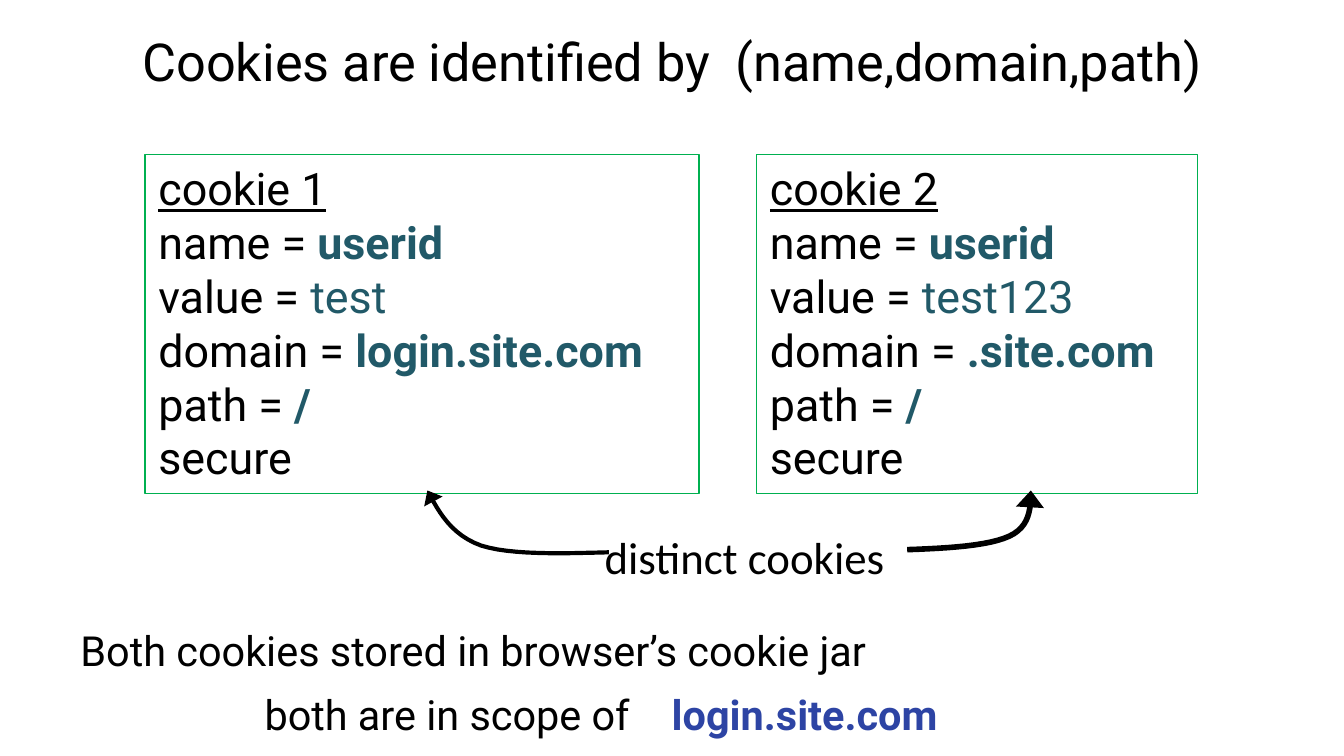
from dataclasses import dataclass

from lxml.etree import SubElement
from pptx import Presentation
from pptx.dml.color import RGBColor
from pptx.enum.shapes import MSO_SHAPE as Preset
from pptx.enum.text import MSO_ANCHOR as Anchor, PP_ALIGN as Align
from pptx.oxml.ns import qn
from pptx.util import Inches, Pt

BLACK = RGBColor(0x00, 0x00, 0x00)
GREEN = RGBColor(0x00, 0xB0, 0x50)
TEAL = RGBColor(0x21, 0x59, 0x68)
BLUE = RGBColor(0x2D, 0x44, 0xA4)
CURVE_STEPS = 12

Point = tuple[float, float]


@dataclass
class Cookie:
    title: str
    value: str
    domain: str
    left: float
    width: float


@dataclass
class Arrow:
    start: Point
    curves: list[tuple[Point, Point, Point]]
    weight: float


COOKIES = [
    Cookie("cookie 1", "test", "login.site.com", 1.08, 4.12),
    Cookie("cookie 2", "test123", ".site.com", 5.63, 3.28),
]
ARROWS = [
    Arrow((4.53, 4.11), [((4.17, 4.12), (3.8, 4.13), (3.58, 4.06)),
                         ((3.36, 3.98), (3.27, 3.82), (3.18, 3.65))], 2.25),
    Arrow((6.75, 4.09), [((7.06, 4.08), (7.36, 4.06), (7.51, 3.99)),
                         ((7.66, 3.92), (7.67, 3.79), (7.67, 3.65))], 3),
]


def add_run(paragraph, text: str, *, size: float, font: str = "Roboto",
            color: RGBColor = BLACK, bold: bool = False,
            underline: bool = False) -> None:
    run = paragraph.add_run()
    run.text = text
    run.font.name = font
    run.font.size = Pt(size)
    run.font.color.rgb = color
    run.font.bold = bold
    run.font.underline = underline


def add_text_box(slide, left: float, top: float, width: float, height: float,
                 anchor: Anchor = Anchor.TOP):
    box = slide.shapes.add_textbox(
        Inches(left), Inches(top), Inches(width), Inches(height))
    frame = box.text_frame
    frame.word_wrap = True
    frame.vertical_anchor = anchor
    return frame


def add_cookie(slide, cookie: Cookie) -> None:
    shape = slide.shapes.add_shape(
        Preset.RECTANGLE, Inches(cookie.left), Inches(1.15),
        Inches(cookie.width), Inches(2.52))
    shape.shadow.inherit = False
    shape.fill.background()
    shape.line.color.rgb = GREEN
    shape.line.width = Pt(0.75)
    frame = shape.text_frame
    frame.word_wrap = True
    frame.vertical_anchor = Anchor.TOP
    heading = frame.paragraphs[0]
    heading.alignment = Align.LEFT
    add_run(heading, cookie.title, size=24, underline=True)
    fields = [
        ("name = ", "userid", True),
        ("value = ", cookie.value, False),
        ("domain = ", cookie.domain, True),
        ("path = ", "/", True),
        ("secure", "", False),
    ]
    for label, value, bold in fields:
        paragraph = frame.add_paragraph()
        paragraph.alignment = Align.LEFT
        add_run(paragraph, label, size=24)
        if value:
            add_run(paragraph, value, size=24, color=TEAL, bold=bold)


def curve_points(arrow: Arrow) -> list[Point]:
    points = []
    start = arrow.start
    for first, second, end in arrow.curves:
        for step in range(1, CURVE_STEPS + 1):
            t = step / CURVE_STEPS
            u = 1 - t
            x, y = (u**3 * a + 3 * u * u * t * b + 3 * u * t * t * c + t**3 * d
                    for a, b, c, d in zip(start, first, second, end))
            points.append((Inches(x), Inches(y)))
        start = end
    return points


def add_arrow(slide, arrow: Arrow) -> None:
    x, y = arrow.start
    builder = slide.shapes.build_freeform(Inches(x), Inches(y))
    builder.add_line_segments(curve_points(arrow), close=False)
    shape = builder.convert_to_shape()
    shape.shadow.inherit = False
    shape.fill.background()
    shape.line.color.rgb = BLACK
    shape.line.width = Pt(arrow.weight)
    outline = shape._element.spPr.find(qn("a:ln"))
    SubElement(outline, qn("a:tailEnd"), type="triangle", w="lg", len="med")


def add_tab_stops(paragraph, *positions: float) -> None:
    tabs = SubElement(paragraph._p.get_or_add_pPr(), qn("a:tabLst"))
    for position in positions:
        SubElement(tabs, qn("a:tab"), pos=str(Inches(position)), algn="l")


def add_summary(slide) -> None:
    frame = add_text_box(slide, 0.5, 4.6, 8.5, 0.88)
    add_run(frame.paragraphs[0], "Both cookies stored in browser’s cookie jar",
            size=22.2)
    scope = frame.add_paragraph()
    scope.space_before = Pt(8)
    add_tab_stops(scope, 1.37, 4.4)
    add_run(scope, "\tboth are in scope of\t", size=22.2)
    add_run(scope, "login.site.com", size=22.2, color=BLUE, bold=True)


def main() -> None:
    presentation = Presentation()
    presentation.slide_width = Inches(10)
    presentation.slide_height = Inches(10 * 9 / 16)
    slide = presentation.slides.add_slide(presentation.slide_layouts[6])

    title = add_text_box(slide, 0.5, -0.02, 9, 0.94, Anchor.MIDDLE).paragraphs[0]
    title.alignment = Align.CENTER
    add_run(title, "Cookies are identified by  (name,domain,path)", size=28)
    add_summary(slide)
    for cookie in COOKIES:
        add_cookie(slide, cookie)
    caption = add_text_box(slide, 4.4, 3.89, 2.31, 0.5).paragraphs[0]
    add_run(caption, "distinct cookies", size=24, font="Calibri")
    for arrow in ARROWS:
        add_arrow(slide, arrow)

    presentation.save("out.pptx")


if __name__ == "__main__":
    main()
